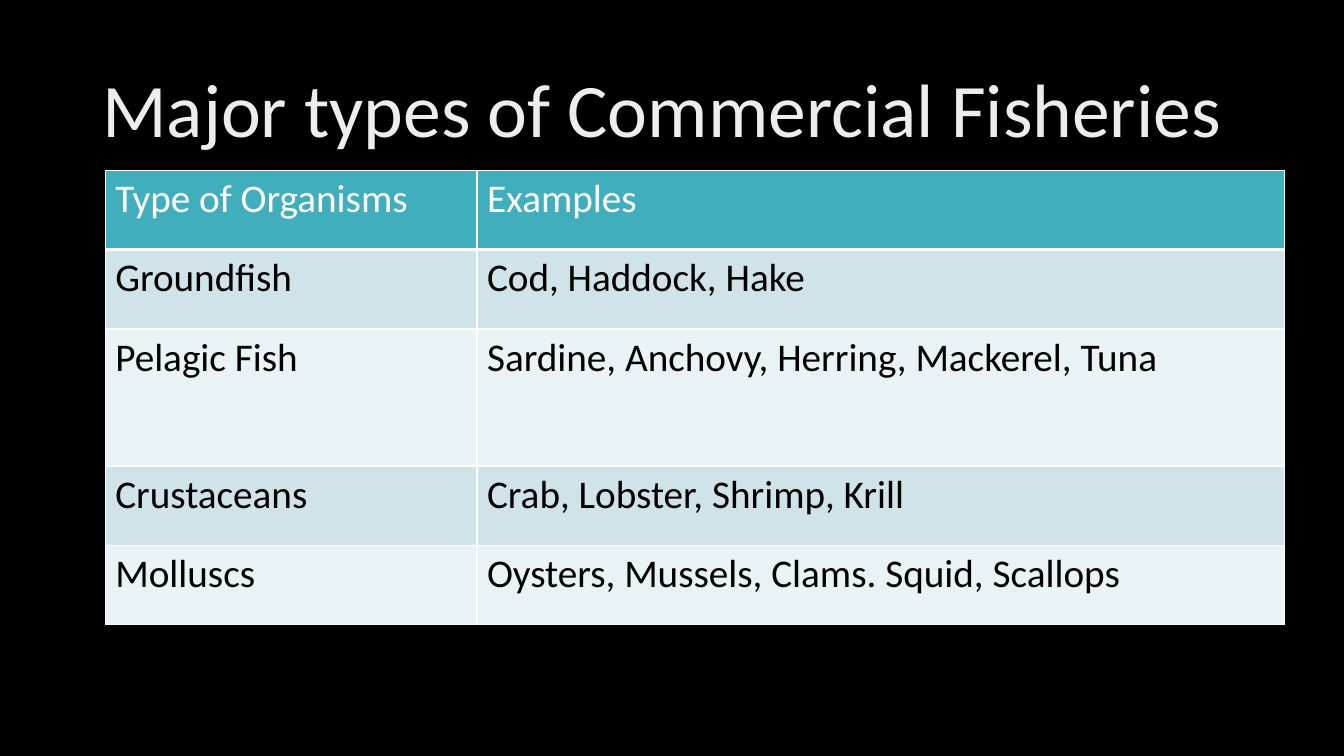
from lxml import etree
from pptx import Presentation
from pptx import util as u
from pptx.dml.color import RGBColor
from pptx.enum import text
from pptx.oxml.ns import qn

TITLE = "Major types of Commercial Fisheries"
ROWS = [
    ("Type of Organisms", "Examples"),
    ("Groundfish", "Cod, Haddock, Hake"),
    ("Pelagic Fish", "Sardine, Anchovy, Herring, Mackerel, Tuna"),
    ("Crustaceans", "Crab, Lobster, Shrimp, Krill"),
    ("Molluscs", "Oysters, Mussels, Clams. Squid, Scallops"),
]
COL_WIDTHS = [265.5, 576.75]
ROW_HEIGHTS = [56.7, 56.7, 97.9, 56.7, 56.7]
COLORS = {
    "background": "000000", "title": "EDEDED", "header": "41AEBD",
    "odd": "CFE3E8", "even": "E9F2F4", "light": "FFFFFF", "dark": "000000",
}


def rgb(name):
    """Return the named palette colour."""
    return RGBColor.from_string(COLORS[name])


def write(tf, content, size, color, spacing=1.0):
    """Put one formatted paragraph into a text frame."""
    tf.word_wrap = True
    p = tf.paragraphs[0]
    p.line_spacing = spacing
    r = p.add_run()
    r.text = content
    r.font.name = "Calibri"
    r.font.size = u.Pt(size)
    r.font.bold = False
    r.font.color.rgb = rgb(color)


def add_borders(cell, bottom):
    """Draw light lines on all four sides of a cell."""
    tc_pr = cell._tc.get_or_add_tcPr()
    for side, width in (("L", 1), ("R", 1), ("T", 1), ("B", bottom)):
        ln = etree.SubElement(tc_pr, qn(f"a:ln{side}"), w=str(u.Pt(width)))
        fill = etree.SubElement(ln, qn("a:solidFill"))
        etree.SubElement(fill, qn("a:srgbClr"), val=COLORS["light"])


def add_title(s):
    """Place the slide title."""
    box = s.shapes.add_textbox(u.Pt(66), u.Pt(28.75), u.Pt(828), u.Pt(104.4))
    box.text_frame.vertical_anchor = text.MSO_ANCHOR.MIDDLE
    write(box.text_frame, TITLE, 54, "title", spacing=0.9)


def add_fisheries_table(s):
    """Place the table of organisms and examples."""
    frame = s.shapes.add_table(
        len(ROWS), len(COL_WIDTHS), u.Pt(75.2), u.Pt(121.6),
        u.Pt(sum(COL_WIDTHS)), u.Pt(sum(ROW_HEIGHTS)))
    table = frame.table
    for column, width in zip(table.columns, COL_WIDTHS):
        column.width = u.Pt(width)
    for i, (row, height) in enumerate(zip(table.rows, ROW_HEIGHTS)):
        row.height = u.Pt(height)
        band = "header" if i == 0 else "odd" if i % 2 else "even"
        for cell, content in zip(row.cells, ROWS[i]):
            add_borders(cell, bottom=1 if i else 3)
            cell.fill.solid()
            cell.fill.fore_color.rgb = rgb(band)
            write(cell.text_frame, content, 28, "dark" if i else "light")


def main():
    """Build and save the slide."""
    prs = Presentation()
    prs.slide_width, prs.slide_height = u.Pt(960), u.Pt(540)
    s = prs.slides.add_slide(prs.slide_layouts[6])
    s.background.fill.solid()
    s.background.fill.fore_color.rgb = rgb("background")
    add_title(s)
    add_fisheries_table(s)
    prs.save("out.pptx")


if __name__ == "__main__":
    main()
